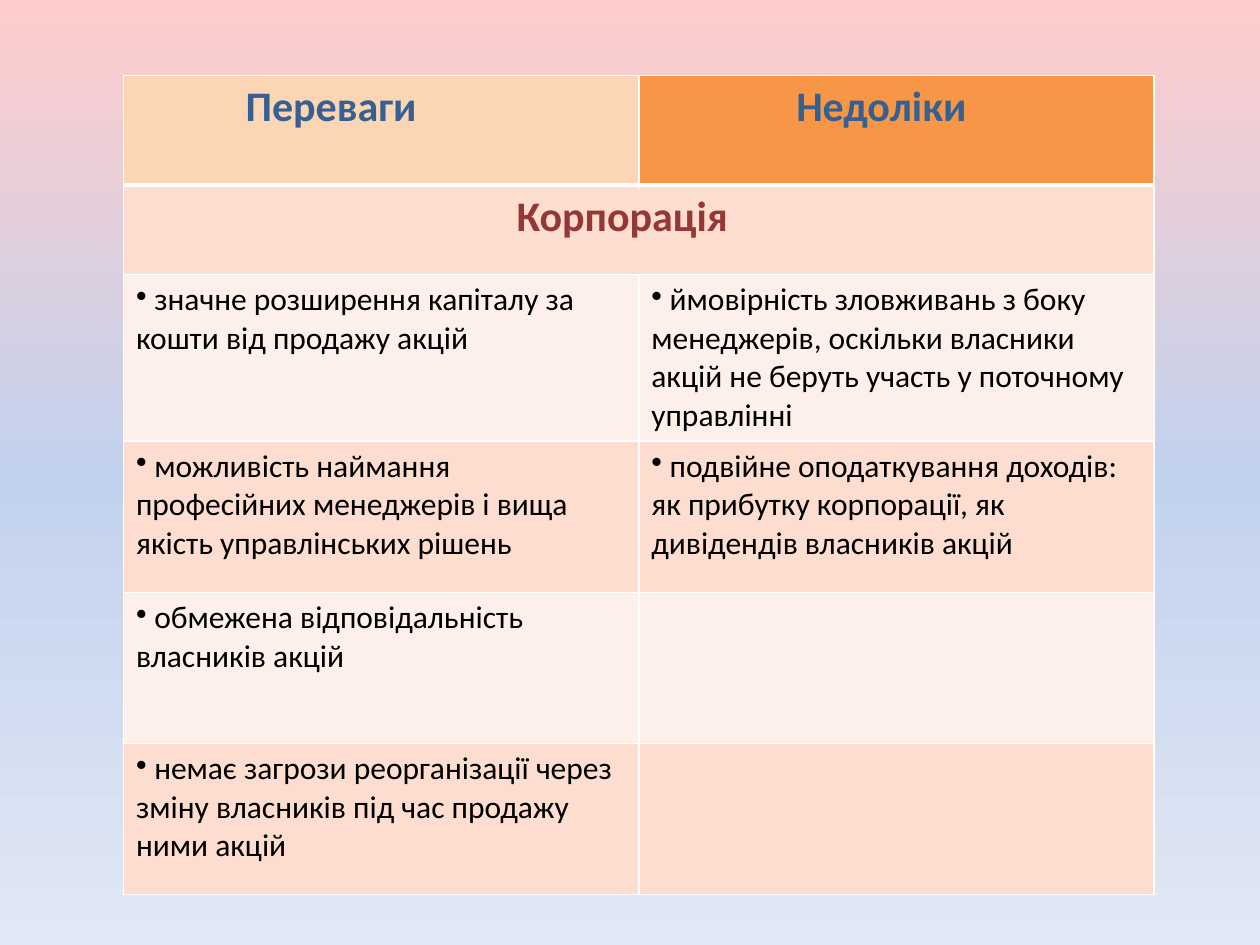
import copy

import pptx
import pptx.dml.color
import pptx.oxml
import pptx.oxml.ns
import pptx.util

Inches = pptx.util.Inches
Pt = pptx.util.Pt
qn = pptx.oxml.ns.qn
NS = pptx.oxml.ns.nsdecls("a")

HEADERS = [("Переваги", "FCD5B5", 0.97), ("Недоліки", "F79646", 1.25)]
ROWS = [
    (["значне розширення капіталу за кошти від продажу акцій"],
     ["ймовірність зловживань з боку менеджерів, оскільки власники акцій "
      "не беруть участь у поточному управлінні"]),
    (["можливість наймання професійних менеджерів і вища якість "
      "управлінських рішень"],
     ["подвійне оподаткування доходів:",
      "як прибутку корпорації, як дивідендів власників акцій"]),
    (["обмежена відповідальність власників акцій"], []),
    (["немає загрози реорганізації через зміну власників під час продажу "
      "ними акцій"], []),
]
BANDS = ["FCDDCF", "FDEFE9"]


def rgb(value):
    return pptx.dml.color.RGBColor.from_string(value)


def set_background(s, stops):
    fill = s.background.fill
    fill.gradient()
    fill.gradient_angle = 270
    gs_list = s.element.find(".//" + qn("a:gsLst"))
    gs_list.insert(1, copy.deepcopy(gs_list[0]))
    for stop, (position, color) in zip(fill.gradient_stops, stops):
        stop.position = position
        stop.color.rgb = rgb(color)


def add_text(p, text, size=18, color="000000", bold=False, bullet=False):
    if bullet:
        pPr = p._p.get_or_add_pPr()
        pPr.set("marL", "0")
        pPr.set("indent", "0")
        pPr.append(pptx.oxml.parse_xml(f'<a:buChar {NS} char="•"/>'))
        text = " " + text
    r = p.add_run()
    r.text = text
    r.font.name = "Calibri"
    r.font.size = Pt(size)
    r.font.bold = bold
    r.font.color.rgb = rgb(color)


def style_cell(cell, fill, top=1, bottom=1):
    cell.fill.solid()
    cell.fill.fore_color.rgb = rgb(fill)
    tcPr = cell._tc.get_or_add_tcPr()
    widths = {"lnL": 1, "lnR": 1, "lnT": top, "lnB": bottom}
    for i, (side, width) in enumerate(widths.items()):
        tcPr.insert(i, pptx.oxml.parse_xml(
            f'<a:{side} {NS} w="{Pt(width)}"><a:solidFill>'
            f'<a:srgbClr val="FFFFFF"/></a:solidFill></a:{side}>'))


def add_heading(cell, text, color, margin):
    cell.margin_left = Inches(margin)
    add_text(cell.text_frame.paragraphs[0], text, size=24, color=color, bold=True)


def add_items(cell, lines):
    tf = cell.text_frame
    for i, line in enumerate(lines):
        p = tf.add_paragraph() if i else tf.paragraphs[0]
        add_text(p, line, bullet=i == 0)


def add_comparison(s):
    heights = [0.87, 0.71] + [1.2] * len(ROWS)
    table = s.shapes.add_table(
        len(heights), 2, Inches(0.98), Inches(0.6),
        Inches(8.18), Inches(sum(heights))).table
    for row, height in zip(table.rows, heights):
        row.height = Inches(height)
    for col, (text, fill, margin) in enumerate(HEADERS):
        table.columns[col].width = Inches(4.09)
        style_cell(table.cell(0, col), fill, bottom=3)
        add_heading(table.cell(0, col), text, "376092", margin)
        for row in range(1, len(heights)):
            style_cell(table.cell(row, col), BANDS[(row - 1) % 2],
                       top=3 if row == 1 else 1)
    table.cell(1, 0).merge(table.cell(1, 1))
    add_heading(table.cell(1, 0), "Корпорація", "953735", 3.12)
    for row, pair in enumerate(ROWS, 2):
        for col, lines in enumerate(pair):
            add_items(table.cell(row, col), lines)


def main():
    prs = pptx.Presentation()
    prs.slide_width = Inches(10)
    prs.slide_height = Inches(7.5)
    s = prs.slides.add_slide(prs.slide_layouts[6])
    set_background(s, [(0, "FFCCCC"), (0.5, "C2D1ED"), (1, "E1E8F5")])
    add_comparison(s)
    prs.save("out.pptx")


if __name__ == "__main__":
    main()
